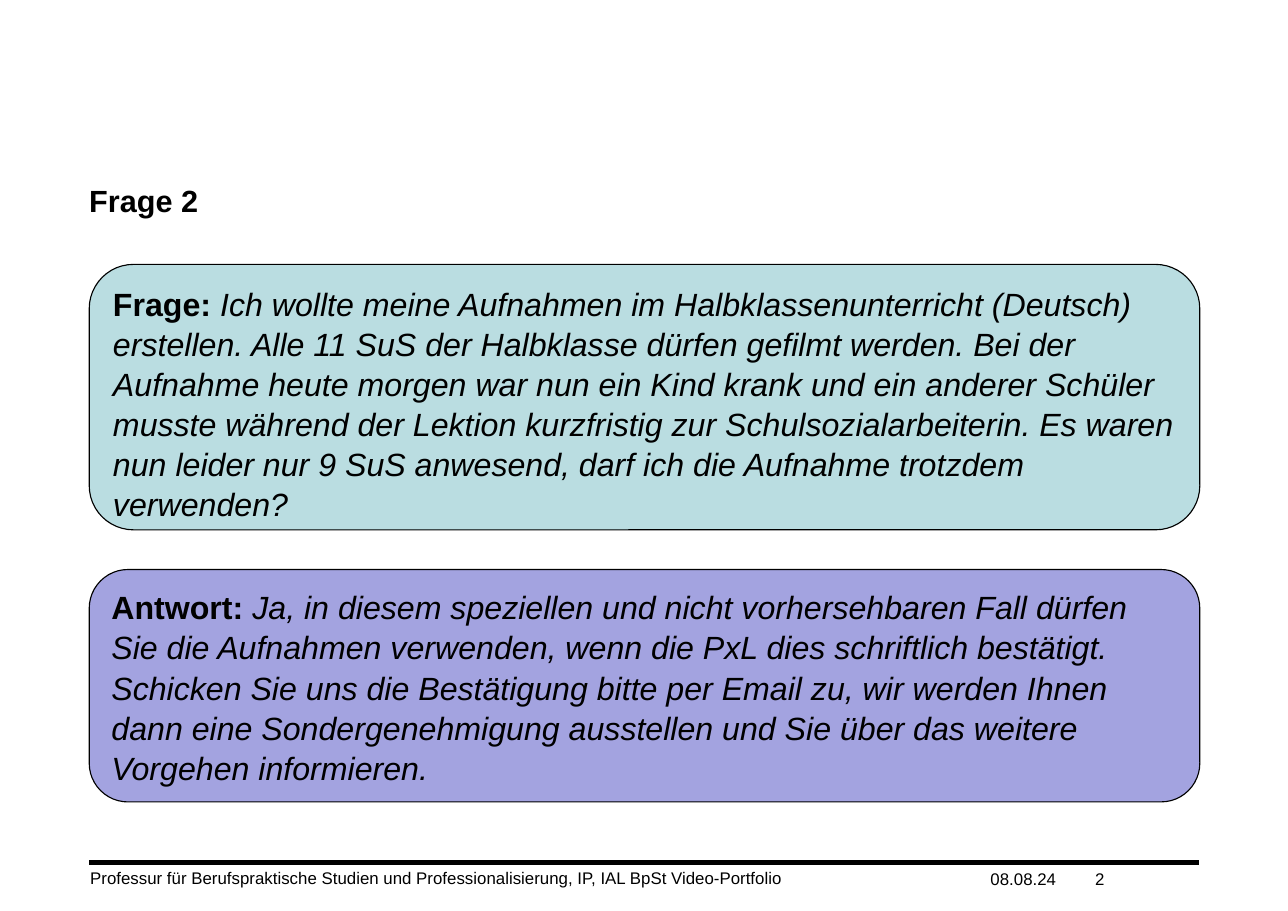
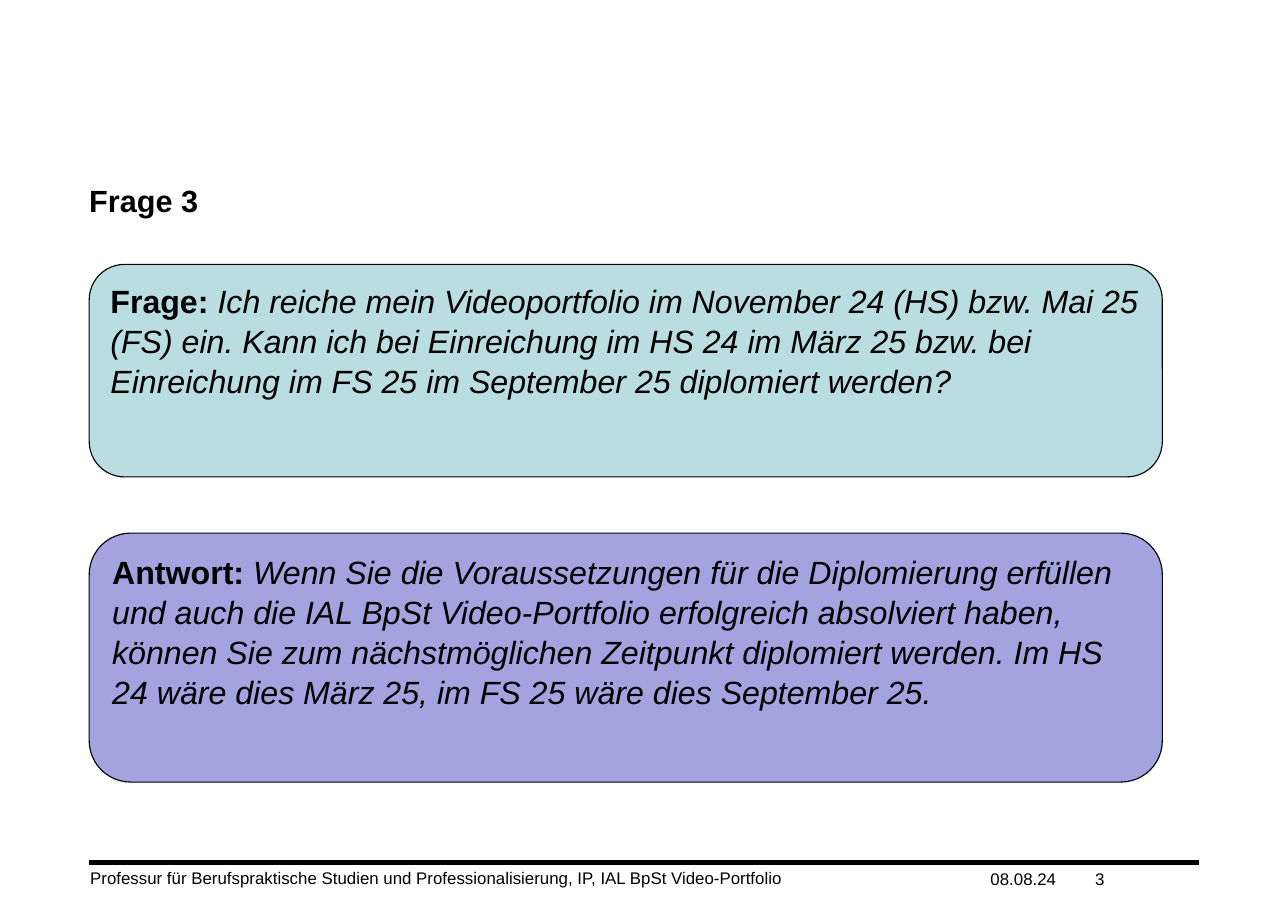
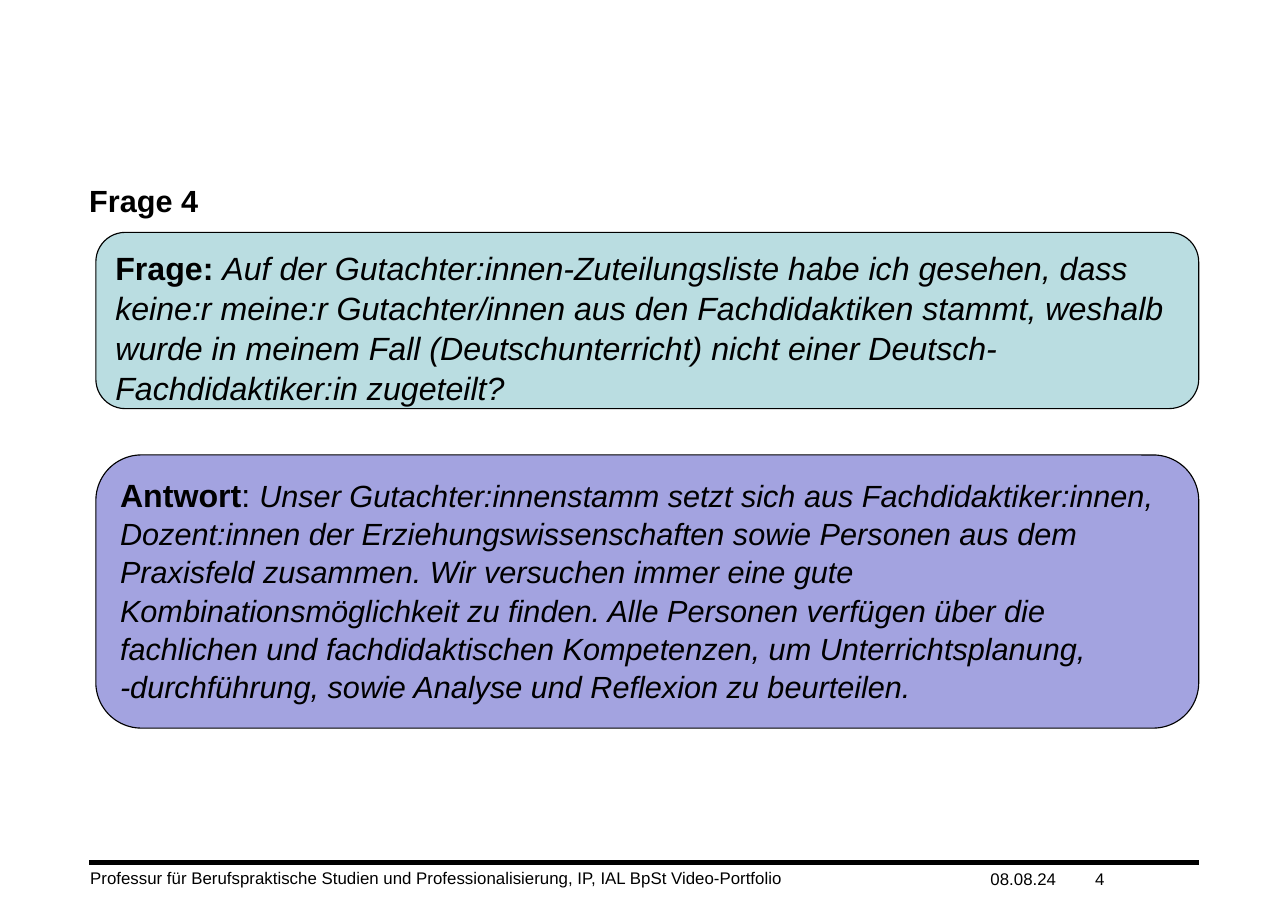
from lxml import etree
from pptx import Presentation
from pptx import util as u
from pptx.dml.color import RGBColor
from pptx.enum import shapes, text
from pptx.oxml.ns import qn

COLORS = {"ink": "000000", "question": "BADDE1", "answer": "A3A3E0"}
LEFT, RIGHT = 0.81, 10.88
FOOTER_TOP = 7.83
FOOTER = "Professur für Berufspraktische Studien und Professionalisierung, IP, IAL BpSt Video-Portfolio"
DATE = "08.08.24"
FIRST_NUMBER = 2

LABEL = {"size": u.Pt(21), "bold": True}
BODY = {"size": u.Pt(21), "italic": True}
SMALL_BODY = {"size": u.Pt(20), "italic": True}
TITLE = {"size": u.Pt(20), "bold": True}
SMALL = {"size": u.Pt(11)}

SLIDES = [
    {
        "left": LEFT,
        "width": 10.08,
        "question": (2.4, 2.41, [
            ("Frage: ", LABEL),
            ("Ich wollte meine Aufnahmen im Halbklassenunterricht (Deutsch) erstellen. "
             "Alle 11 SuS der Halbklasse dürfen gefilmt werden. Bei der Aufnahme heute morgen "
             "war nun ein Kind krank und ein anderer Schüler musste während der Lektion "
             "kurzfristig zur Schulsozialarbeiterin. Es waren nun leider nur 9 SuS anwesend, "
             "darf ich die Aufnahme trotzdem verwenden?", BODY),
        ]),
        "answer": (5.17, 2.11, [
            ("Antwort: ", LABEL),
            ("Ja, in diesem speziellen und nicht vorhersehbaren Fall dürfen Sie die Aufnahmen "
             "verwenden, wenn die PxL dies schriftlich bestätigt. Schicken Sie uns die "
             "Bestätigung bitte per Email zu, wir werden Ihnen dann eine Sondergenehmigung "
             "ausstellen und Sie über das weitere Vorgehen informieren.", BODY),
        ]),
    },
    {
        "left": LEFT,
        "width": 9.74,
        "question": (2.4, 1.93, [
            ("Frage: ", LABEL),
            ("Ich reiche mein Videoportfolio im November 24 (HS) bzw. Mai 25 (FS) ein. "
             "Kann ich bei Einreichung im HS 24 im März 25 bzw. bei Einreichung im FS 25 "
             "im September 25 diplomiert werden?", BODY),
        ]),
        "answer": (4.84, 2.26, [
            ("Antwort: ", LABEL),
            ("Wenn Sie die Voraussetzungen für die Diplomierung erfüllen und auch die IAL BpSt "
             "Video-Portfolio erfolgreich absolviert haben, können Sie zum nächstmöglichen "
             "Zeitpunkt diplomiert werden. Im HS 24 wäre dies März 25, im FS 25 wäre dies "
             "September 25.", BODY),
        ]),
    },
    {
        "left": 0.87,
        "width": 10.01,
        "question": (2.11, 1.6, [
            ("Frage: ", LABEL),
            ("Auf der Gutachter:innen-Zuteilungsliste habe ich gesehen, dass keine:r meine:r "
             "Gutachter/innen aus den Fachdidaktiken stammt, weshalb wurde in meinem Fall "
             "(Deutschunterricht) nicht einer Deutsch-Fachdidaktiker:in zugeteilt?", BODY),
        ]),
        "answer": (4.13, 2.48, [
            ("Antwort", LABEL),
            (": ", {"size": u.Pt(21)}),
            ("Unser Gutachter:innenstamm setzt sich aus Fachdidaktiker:innen, Dozent:innen der "
             "Erziehungswissenschaften sowie Personen aus dem Praxisfeld zusammen. Wir versuchen "
             "immer eine gute Kombinationsmöglichkeit zu finden. Alle Personen verfügen über die "
             "fachlichen und fachdidaktischen Kompetenzen, um Unterrichtsplanung, -durchführung, "
             "sowie Analyse und Reflexion zu beurteilen.", SMALL_BODY),
        ]),
    },
]


def color(name):
    return RGBColor.from_string(COLORS[name])


def write(shape, spans, frame_format, line_spacing=None):
    frame = shape.text_frame
    for name, value in {"word_wrap": True, **frame_format}.items():
        setattr(frame, name, value)
    para = frame.paragraphs[0]
    para.alignment = text.PP_ALIGN.LEFT
    para.line_spacing = line_spacing
    for words, span_format in spans:
        span = para.add_run()
        span.text = words
        for name, value in {"name": "Arial", **span_format}.items():
            setattr(span.font, name, value)
        span.font.color.rgb = color("ink")


def add_label(page, area, words, span_format, anchor=text.MSO_ANCHOR.TOP, inset=True):
    box = page.shapes.add_textbox(*map(u.Inches, area))
    frame_format = {"vertical_anchor": anchor}
    if not inset:
        frame_format.update(dict.fromkeys(
            ("margin_left", "margin_top", "margin_right", "margin_bottom"), 0))
    write(box, [(words, span_format)], frame_format)


def add_card(page, area, fill, spans):
    card = page.shapes.add_shape(shapes.MSO_SHAPE.ROUNDED_RECTANGLE, *map(u.Inches, area))
    card.shadow.inherit = False
    card.fill.solid()
    card.fill.fore_color.rgb = color(fill)
    card.line.color.rgb = color("ink")
    card.line.width = u.Pt(0.75)
    write(card, spans, {"vertical_anchor": text.MSO_ANCHOR.TOP}, 1.04)


def add_footer(page, number):
    rule = page.shapes.add_connector(
        shapes.MSO_CONNECTOR.STRAIGHT,
        *map(u.Inches, (LEFT, FOOTER_TOP, RIGHT, FOOTER_TOP)))
    rule.line.color.rgb = color("ink")
    rule.line.width = u.Pt(3)
    etree.SubElement(rule._element.spPr, qn("a:effectLst"))
    add_label(page, (0.72, FOOTER_TOP, 9.35, 0.29), FOOTER, SMALL)
    for left, words in ((8.99, DATE), (9.94, str(number))):
        add_label(page, (left, 7.87, 0.94, 0.2), words, SMALL,
                  text.MSO_ANCHOR.BOTTOM, inset=False)


def main():
    deck = Presentation()
    deck.slide_width, deck.slide_height = u.Inches(11.69), u.Inches(8.27)
    for number, content in enumerate(SLIDES, FIRST_NUMBER):
        page = deck.slides.add_slide(deck.slide_layouts[6])
        add_footer(page, number)
        add_label(page, (LEFT, 1.65, 10.08, 0.4), f"Frage {number}", TITLE, inset=False)
        for kind in ("question", "answer"):
            top, height, spans = content[kind]
            add_card(page, (content["left"], top, content["width"], height), kind, spans)
    deck.save("out.pptx")


if __name__ == "__main__":
    main()
